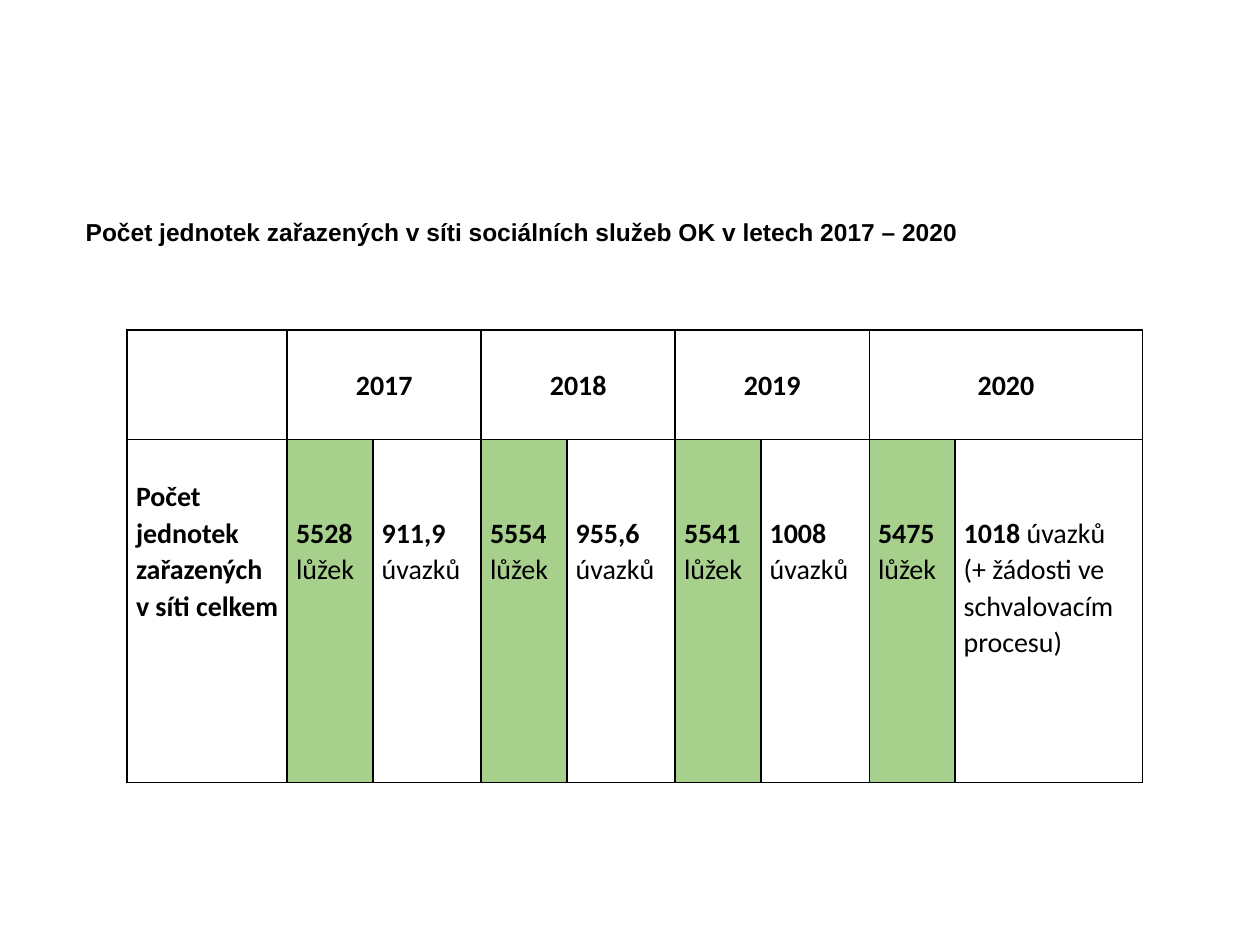
from dataclasses import dataclass

from lxml import etree
from pptx import Presentation
from pptx import util as u
from pptx.dml.color import RGBColor
from pptx.enum import text
from pptx.oxml import ns


@dataclass(frozen=True)
class Theme:
    ink: RGBColor = RGBColor(0, 0, 0)
    beds_fill: RGBColor = RGBColor(0xA8, 0xD0, 0x8D)
    title_font: str = "Arial"
    table_font: str = "Calibri"
    title_size: u.Pt = u.Pt(14)
    table_size: u.Pt = u.Pt(16)
    border: u.Pt = u.Pt(1)
    line_spacing: float = 1.07


@dataclass(frozen=True)
class Year:
    label: str
    beds: str
    jobs: str
    note: str = ""


THEME = Theme()
YEARS = [
    Year("2017", "5528", "911,9"),
    Year("2018", "5554", "955,6"),
    Year("2019", "5541", "1008"),
    Year("2020", "5475", "1018", " (+ žádosti ve schvalovacím procesu)"),
]
LABEL_WIDTH, BEDS_WIDTH, JOBS_WIDTH, NOTE_WIDTH = 1.27, 0.68, 0.86, 1.49
ROW_HEIGHTS = [0.87, 2.72]
LABEL_TOP, VALUE_TOP = 0.3, 0.59


def apply(target, values: dict) -> None:
    for name, value in values.items():
        setattr(target, name, value)


def add_run(paragraph, words: str, font: str, size: u.Pt, bold: bool) -> None:
    run = paragraph.add_run()
    run.text = words
    apply(run.font, {"name": font, "size": size, "bold": bold})
    run.font.color.rgb = THEME.ink


def add_borders(cell) -> None:
    properties = cell._tc.get_or_add_tcPr()
    for side in ("lnL", "lnR", "lnT", "lnB"):
        line = etree.SubElement(properties, ns.qn(f"a:{side}"), w=str(THEME.border))
        solid = etree.SubElement(line, ns.qn("a:solidFill"))
        etree.SubElement(solid, ns.qn("a:srgbClr"), val=str(THEME.ink))


def write_cell(cell, bold: str, plain: str = "", top: float = 0,
               align=text.PP_ALIGN.LEFT, anchor=text.MSO_ANCHOR.TOP) -> None:
    apply(cell, {"margin_left": u.Inches(0.07), "margin_right": u.Inches(0.07),
                 "margin_top": u.Inches(top), "margin_bottom": 0,
                 "vertical_anchor": anchor})
    paragraph = cell.text_frame.paragraphs[0]
    apply(paragraph, {"alignment": align, "line_spacing": THEME.line_spacing})
    for words, is_bold in ((bold, True), (plain, False)):
        if words:
            add_run(paragraph, words, THEME.table_font, THEME.table_size, is_bold)


def add_title(slide, words: str) -> None:
    title = slide.shapes.title
    apply(title, {"left": u.Inches(0.58), "top": u.Inches(1.67),
                  "width": u.Inches(8.5), "height": u.Inches(5.5)})
    apply(title.text_frame, {"vertical_anchor": text.MSO_ANCHOR.TOP,
                             "word_wrap": True,
                             "auto_size": text.MSO_AUTO_SIZE.NONE})
    paragraph = title.text_frame.paragraphs[0]
    paragraph.alignment = text.PP_ALIGN.LEFT
    add_run(paragraph, words, THEME.title_font, THEME.title_size, True)


def add_units_table(slide, years: list[Year]) -> None:
    widths = [LABEL_WIDTH]
    for year in years:
        widths += [BEDS_WIDTH, NOTE_WIDTH if year.note else JOBS_WIDTH]
    table = slide.shapes.add_table(
        len(ROW_HEIGHTS), len(widths), u.Inches(1.01), u.Inches(2.62),
        u.Inches(sum(widths)), u.Inches(sum(ROW_HEIGHTS))).table
    apply(table, {"first_row": False, "horz_banding": False})
    for column, width in zip(table.columns, widths):
        column.width = u.Inches(width)
    for row, height in zip(table.rows, ROW_HEIGHTS):
        row.height = u.Inches(height)
    for cell in table.iter_cells():
        add_borders(cell)
        cell.fill.background()

    # Row label
    write_cell(table.cell(1, 0), "Počet jednotek zařazených v síti celkem", top=LABEL_TOP)

    # One pair of columns per year: beds and jobs
    for index, year in enumerate(years):
        column = 1 + 2 * index
        heading, beds, jobs = (table.cell(0, column), table.cell(1, column),
                               table.cell(1, column + 1))
        heading.merge(table.cell(0, column + 1))
        write_cell(heading, year.label, align=text.PP_ALIGN.CENTER,
                   anchor=text.MSO_ANCHOR.MIDDLE)
        write_cell(beds, year.beds, " lůžek", VALUE_TOP)
        beds.fill.solid()
        beds.fill.fore_color.rgb = THEME.beds_fill
        write_cell(jobs, year.jobs, " úvazků" + year.note, VALUE_TOP)


def main() -> None:
    deck = Presentation()
    apply(deck, {"slide_width": u.Inches(10), "slide_height": u.Inches(7.5)})
    slide = deck.slides.add_slide(deck.slide_layouts[0])
    subtitle = slide.placeholders[1].element
    subtitle.getparent().remove(subtitle)
    add_title(slide, "Počet jednotek zařazených v síti sociálních služeb OK v letech 2017 – 2020")
    add_units_table(slide, YEARS)
    deck.save("out.pptx")


if __name__ == "__main__":
    main()
